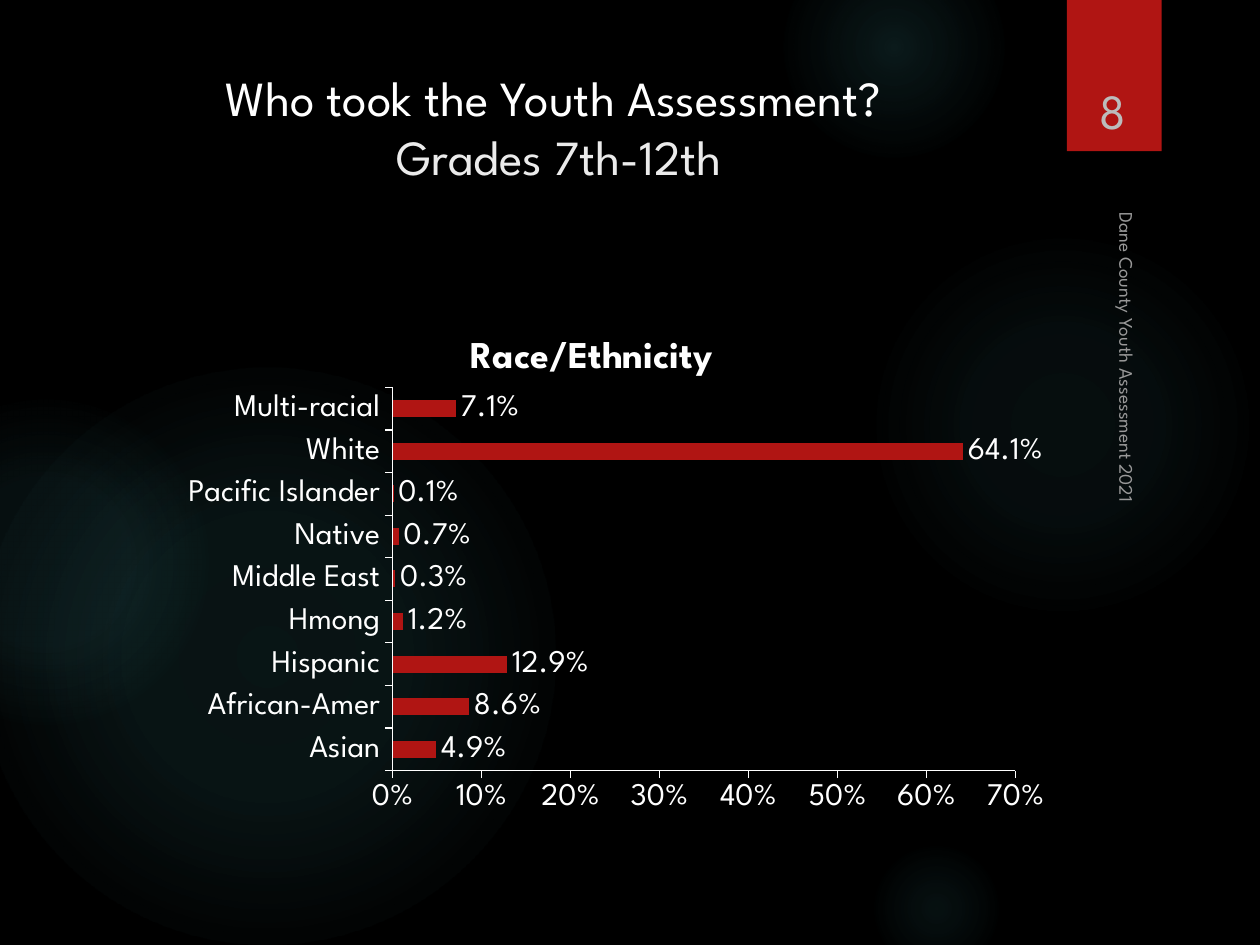
"""Build a slide with a bar chart of assessment takers by race and ethnicity."""
from lxml import etree
from pptx import Presentation
from pptx.chart.data import CategoryChartData
from pptx.dml.color import RGBColor
from pptx.enum.chart import XL_CHART_TYPE, XL_LABEL_POSITION, XL_TICK_MARK
from pptx.enum.shapes import MSO_SHAPE
from pptx.enum.text import MSO_ANCHOR, PP_ALIGN
from pptx.oxml import parse_xml
from pptx.oxml.ns import nsdecls, qn
from pptx.util import Cm, Pt

BAR = XL_CHART_TYPE.BAR_CLUSTERED
OUTSIDE_END = XL_LABEL_POSITION.OUTSIDE_END
TICK_OUT = XL_TICK_MARK.OUTSIDE
OVAL, RECTANGLE = MSO_SHAPE.OVAL, MSO_SHAPE.RECTANGLE
TOP, BOTTOM = MSO_ANCHOR.TOP, MSO_ANCHOR.BOTTOM
LEFT, CENTER = PP_ALIGN.LEFT, PP_ALIGN.CENTER

FONT = "League Spartan"
BLACK, WHITE, RED, GLOW = "000000", "FFFFFF", "B01513", "50B9C1"

GLOWS = [
    (17.5, 4.65, 7.82, [(0, 7), (36, 6), (69, 0)]),
    (15.8, -1.27, 4.45, [(0, 14), (36, 7), (73, 0)]),
    (17.5, 16.94, 2.74, [(0, 9), (36, 5), (66, 0)]),
    (-0.43, 7.42, 11.63, [(0, 11), (36, 10), (75, 0)]),
    (-2.34, 8.05, 6.55, [(0, 8), (36, 8), (72, 0)]),
]
TITLE = [("Who took the Youth Assessment? ", WHITE), ("Grades 7th-12th", "EBEBEB")]
FOOTER = [("Dane County Youth Assessment 2021", "999999")]
NUMBER = [("8", "BCBCBC")]
CHART_TITLE = "Race/Ethnicity"
SHARES = {
    "Asian": 0.049, "African-Amer": 0.086, "Hispanic": 0.129,
    "Hmong": 0.012, "Middle East": 0.003, "Native": 0.007,
    "Pacific Islander": 0.001, "White": 0.641, "Multi-racial": 0.071,
}
TITLE_PLACE = {"x": 0.35, "y": 0.03}
PLOT_PLACE = {"x": 0.27, "y": 0.14, "w": 0.7, "h": 0.74}


def color(value):
    return RGBColor.from_string(value)


def set_font(font, size, value, bold=False):
    font.name, font.size, font.bold = FONT, Pt(size), bold
    font.color.rgb = color(value)


def add_shape(slide, kind, box, fill):
    shape = slide.shapes.add_shape(kind, *map(Cm, box))
    shape.shadow.inherit = False
    shape.fill.solid()
    shape.fill.fore_color.rgb = color(fill)
    shape.line.fill.background()
    return shape


def add_glow(slide, left, top, size, stops):
    shape = add_shape(slide, OVAL, (left, top, size, size), GLOW)
    stop_xml = "".join(
        f'<a:gs pos="{position * 1000}"><a:srgbClr val="{GLOW}">'
        f'<a:alpha val="{alpha * 1000}"/></a:srgbClr></a:gs>'
        for position, alpha in stops
    )
    gradient = parse_xml(
        f'<a:gradFill {nsdecls("a")}><a:gsLst>{stop_xml}</a:gsLst><a:path path="circle">'
        '<a:fillToRect l="50000" t="50000" r="50000" b="50000"/></a:path></a:gradFill>'
    )
    properties = shape.element.spPr
    properties.replace(properties.find(qn("a:solidFill")), gradient)


def add_text(slide, lines, box, size=28, align=CENTER, anchor=BOTTOM, rotation=0):
    shape = slide.shapes.add_textbox(*map(Cm, box))
    shape.rotation = rotation
    frame = shape.text_frame
    frame.word_wrap = True
    frame.vertical_anchor = anchor
    paragraph = frame.paragraphs[0]
    paragraph.alignment = align
    for index, (text, value) in enumerate(lines):
        if index:
            paragraph.add_line_break()
        run = paragraph.add_run()
        run.text = text
        set_font(run.font, size, value)


def place(layout, values, inner=False):
    for child in list(layout):
        layout.remove(child)
    manual = etree.SubElement(layout, qn("c:manualLayout"))
    settings = [("layoutTarget", "inner")] if inner else []
    settings += [("xMode", "edge"), ("yMode", "edge"), *values.items()]
    for name, value in settings:
        etree.SubElement(manual, qn(f"c:{name}")).set("val", str(value))


def get_layout(parent, before):
    layout = parent.find(qn("c:layout"))
    if layout is None:
        layout = etree.Element(qn("c:layout"))
        parent.find(qn(before)).addprevious(layout)
    return layout


def add_chart(slide, box):
    data = CategoryChartData(number_format="0.0%")
    data.categories = list(SHARES)
    data.add_series("Series 1", list(SHARES.values()))
    chart = slide.shapes.add_chart(BAR, *map(Cm, box), data).chart
    set_font(chart.font, 18, WHITE)
    chart.has_legend = False
    chart.has_title = True
    frame = chart.chart_title.text_frame
    frame.text = CHART_TITLE
    set_font(frame.paragraphs[0].runs[0].font, 21.6, WHITE, bold=True)
    chart.chart_title.include_in_layout = False

    for axis in (chart.category_axis, chart.value_axis):
        axis.has_major_gridlines = False
        axis.major_tick_mark = TICK_OUT
        axis.format.line.color.rgb = color(WHITE)
        axis.format.line.width = Pt(0.75)
    axis = chart.value_axis
    axis.minimum_scale, axis.maximum_scale, axis.major_unit = 0, 0.7, 0.1
    axis.tick_labels.number_format = "0%"
    axis.tick_labels.number_format_is_linked = False

    plot = chart.plots[0]
    plot.gap_width = 150
    plot.vary_by_categories = False
    fill = plot.series[0].format.fill
    fill.solid()
    fill.fore_color.rgb = color(RED)
    plot.has_data_labels = True
    labels = plot.data_labels
    labels.show_value = True
    labels.number_format, labels.number_format_is_linked = "0.0%", False
    labels.position = OUTSIDE_END
    set_font(labels.font, 18, WHITE)

    root = chart.element.chart
    place(get_layout(root.find(qn("c:title")), "c:overlay"), TITLE_PLACE)
    place(get_layout(root.plotArea, "c:barChart"), PLOT_PLACE, inner=True)


def main():
    presentation = Presentation()
    presentation.slide_width, presentation.slide_height = Cm(25.4), Cm(19.05)
    slide = presentation.slides.add_slide(presentation.slide_layouts[6])
    slide.background.fill.solid()
    slide.background.fill.fore_color.rgb = color(BLACK)
    for glow in GLOWS:
        add_glow(slide, *glow)
    add_shape(slide, RECTANGLE, (21.51, 0, 1.91, 3.05), RED)
    add_text(slide, TITLE, (1.47, 1.24, 19.61, 3.18), anchor=TOP)
    add_text(slide, FOOTER, (17.32, 9.07, 10.72, 0.64), size=11, align=LEFT, rotation=90)
    add_text(slide, NUMBER, (21.56, 0.81, 1.75, 2.13))
    add_chart(slide, (3.07, 6.35, 17.98, 10.44))
    presentation.save("out.pptx")


if __name__ == "__main__":
    main()
